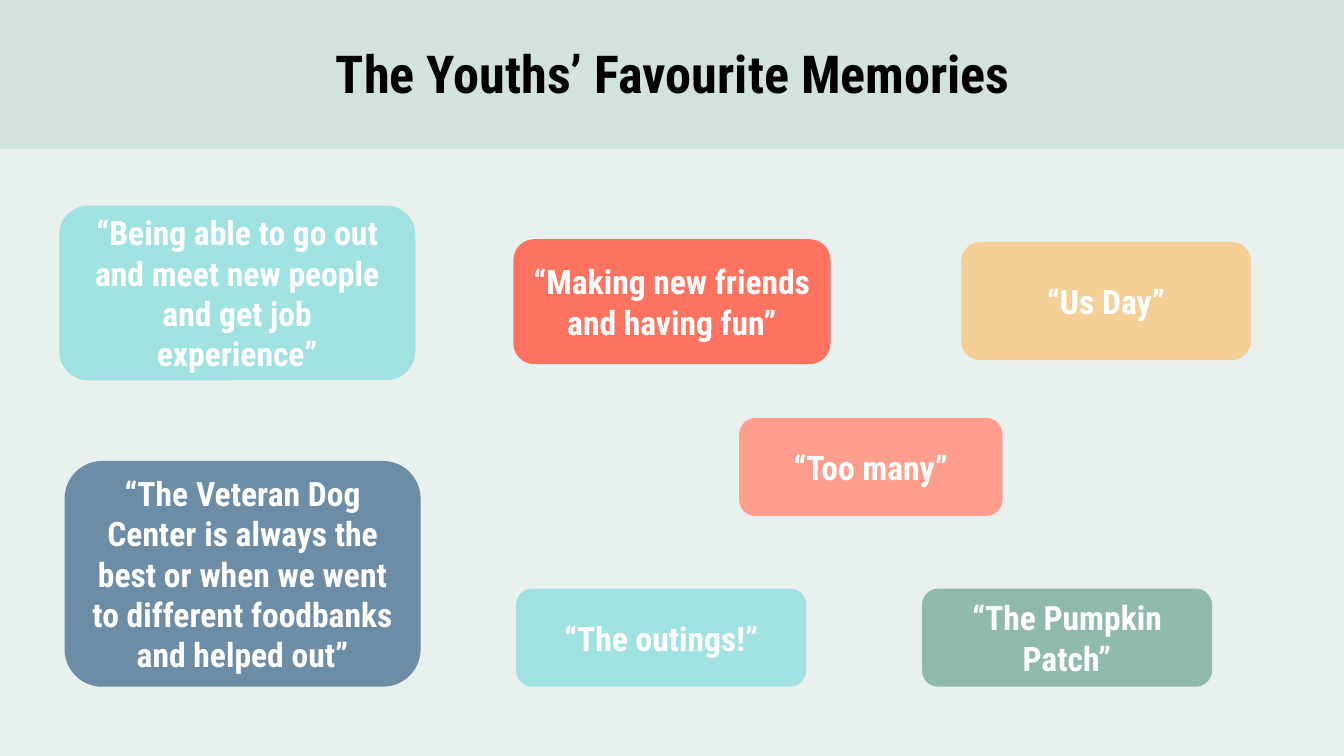
"""Build the slide of the youths' favourite memories as a board of quote cards."""
from pptx import Presentation
from pptx.dml.color import RGBColor
from pptx.enum.shapes import MSO_SHAPE
from pptx.enum.text import MSO_ANCHOR, MSO_AUTO_SIZE, PP_ALIGN
from pptx.util import Inches, Pt

THEME = {
    "font": "Roboto Condensed",
    "title_size": 28,
    "quote_size": 18,
    "black": "000000",
    "white": "FFFFFF",
    "page": "E9F1EE",
    "header": "D2E3DD",
    "salmon": "FF9E8C",
    "sand": "F4D096",
    "slate": "6D8DA7",
    "coral": "FF7260",
    "aqua": "A0E2E2",
    "sage": "8FB9AB",
}


def add_block(s, kind, box, color):
    sp = s.shapes.add_shape(kind, *[Inches(v) for v in box])
    sp.shadow.inherit = False
    sp.fill.solid()
    sp.fill.fore_color.rgb = RGBColor.from_string(THEME[color])
    sp.line.fill.background()
    return sp


def set_text(sp, text, size, color):
    tf = sp.text_frame
    tf.text = text
    tf.word_wrap = True
    tf.auto_size = MSO_AUTO_SIZE.NONE
    tf.vertical_anchor = MSO_ANCHOR.MIDDLE
    p = tf.paragraphs[0]
    p.alignment = PP_ALIGN.CENTER
    font = p.runs[0].font
    font.name = THEME["font"]
    font.size = Pt(THEME[size])
    font.bold = True
    font.color.rgb = RGBColor.from_string(THEME[color])


prs = Presentation()
prs.slide_width, prs.slide_height = Inches(10), Inches(10 * 9 / 16)
s = prs.slides.add_slide(prs.slide_layouts[5])

add_block(s, MSO_SHAPE.RECTANGLE, (0, 1, 10, 4.73), "page")
add_block(s, MSO_SHAPE.RECTANGLE, (0, -0.03, 10, 1.14), "header")

title = s.shapes.title
s.shapes.element.append(title.element)
title.left, title.top = Inches(2.31), Inches(0.37)
title.width, title.height = Inches(5.39), Inches(0.34)
set_text(title, "The Youths’ Favourite Memories", "title_size", "black")
tf = title.text_frame
tf.margin_left = tf.margin_right = tf.margin_top = tf.margin_bottom = Inches(0.1)

quotes = [
    ("“Too many”", (5.5, 3.11, 1.96, 0.73), "salmon"),
    ("“Us Day”", (7.15, 1.8, 2.16, 0.88), "sand"),
    ("“The Veteran Dog Center is always the best or when we went "
     "to different foodbanks and helped out”", (0.48, 3.43, 2.65, 1.68), "slate"),
    ("“Making new friends and having fun”", (3.82, 1.78, 2.36, 0.93), "coral"),
    ("“Being able to go out and meet new people and get job experience”",
     (0.44, 1.53, 2.65, 1.3), "aqua"),
    ("“The outings!”", (3.84, 4.38, 2.16, 0.73), "aqua"),
    ("“The Pumpkin Patch”", (6.86, 4.38, 2.16, 0.73), "sage"),
]
for quote, box, color in quotes:
    card = add_block(s, MSO_SHAPE.ROUNDED_RECTANGLE, box, color)
    set_text(card, quote, "quote_size", "white")

prs.save("out.pptx")
